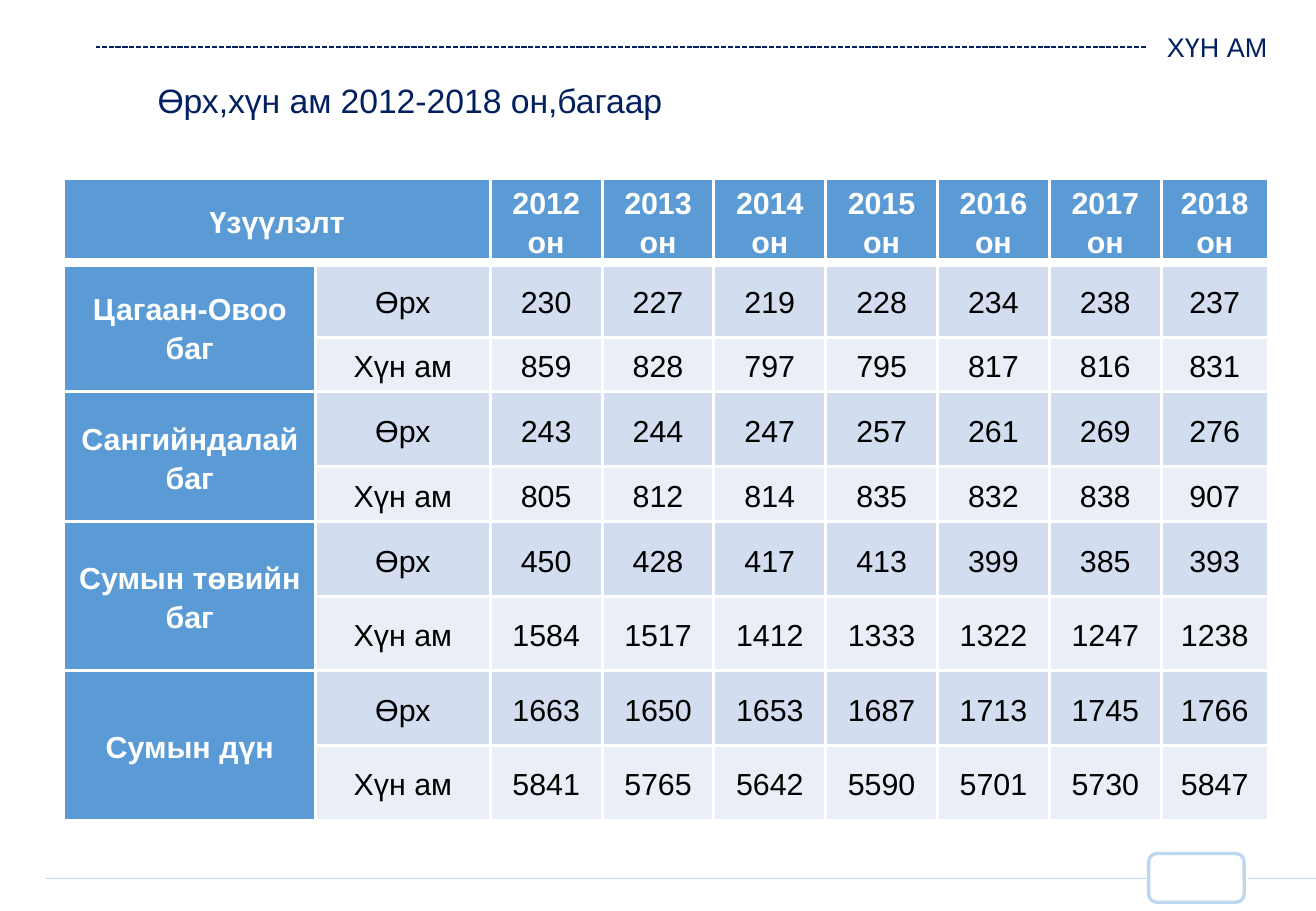
from lxml.etree import SubElement as Sub
from pptx import Presentation
from pptx.dml.color import RGBColor as RGB
from pptx.enum.dml import MSO_LINE as Dash
from pptx.enum.shapes import MSO_CONNECTOR as Conn, MSO_SHAPE as Form
from pptx.enum.text import MSO_ANCHOR as Anchor, PP_ALIGN as Align
from pptx.oxml.ns import qn
from pptx.util import Cm, Pt

# Content
YEARS = range(2012, 2019)
HEAD = "Үзүүлэлт"
KINDS = ("Өрх", "Хүн ам")
BAGS = [
    ("Цагаан-Овоо баг",
     (230, 227, 219, 228, 234, 238, 237),
     (859, 828, 797, 795, 817, 816, 831)),
    ("Сангийндалай баг",
     (243, 244, 247, 257, 261, 269, 276),
     (805, 812, 814, 835, 832, 838, 907)),
    ("Сумын төвийн баг",
     (450, 428, 417, 413, 399, 385, 393),
     (1584, 1517, 1412, 1333, 1322, 1247, 1238)),
    ("Сумын дүн",
     (1663, 1650, 1653, 1687, 1713, 1745, 1766),
     (5841, 5765, 5642, 5590, 5701, 5730, 5847)),
]
# Text, size, left, top, width, height
TEXTS = [
    ("ХҮН АМ", 8, 11.96, 0.2, 1.58, 0.61),
    ("Өрх,хүн ам 2012-2018 он,багаар", 10, 1.4, 0.71, 8.46, 0.69),
]
# Start x, end x, y, colour, dash
LINES = [
    (11.99, 1, 0.49, "navy", Dash.SQUARE_DOT),
    (0.48, 11.99, 9.19, "pale", None),
    (13.06, 13.77, 9.19, "pale", None),
]

# Look
INK = {"navy": "002060", "pale": "BDD7EE", "blue": "5B9BD5",
       "odd": "D2DEEF", "even": "EAEFF7", "white": "FFFFFF", "black": "000000"}
COLS = [2.63, 1.83] + [1.17] * 6 + [1.12]
ROWS = [0.78, 0.78, 0.57, 0.78, 0.58] + [0.78] * 4
CELL = {"margin_left": Cm(0.13), "margin_right": Cm(0.13), "margin_top": 0,
        "margin_bottom": 0, "vertical_anchor": Anchor.MIDDLE}


def color(name):
    return RGB.from_string(INK[name])


def assign(obj, form):
    for key, val in form.items():
        setattr(obj, key, val)


def write(frame, text, size, ink, bold=False):
    para = frame.paragraphs[0]
    run = para.add_run()
    run.text = text
    assign(run.font, {"name": "Arial", "size": Pt(size), "bold": bold})
    run.font.color.rgb = color(ink)
    return para


def border(cell, row):
    thick = {"L": 1, "R": 1, "T": 3 if row == 1 else 1, "B": 1 if row else 3}
    props = cell._tc.get_or_add_tcPr()
    for side, width in thick.items():
        edge = Sub(props, qn(f"a:ln{side}"), w=str(Pt(width)))
        Sub(Sub(edge, qn("a:solidFill")), qn("a:srgbClr"), val=INK["white"])


deck = Presentation()
assign(deck, {"slide_width": Cm(13.77), "slide_height": Cm(9.53)})
shapes = deck.slides.add_slide(deck.slide_layouts[6]).shapes

# Rules at the top and bottom
for start, end, y, ink, dash in LINES:
    rule = shapes.add_connector(Conn.STRAIGHT, Cm(start), Cm(y), Cm(end), Cm(y))
    rule.line.color.rgb = color(ink)
    assign(rule.line, {"width": Pt(0.5), "dash_style": dash})
    Sub(rule._element.spPr, qn("a:effectLst"))

# Page box
box = shapes.add_shape(Form.ROUNDED_RECTANGLE, Cm(12.02), Cm(8.93), Cm(1), Cm(0.51))
box.shadow.inherit = False
box.fill.background()
box.line.color.rgb = color("pale")
box.line.width = Pt(1)

# Section name and title
for text, size, *area in TEXTS:
    frame = shapes.add_textbox(*map(Cm, area)).text_frame
    frame.word_wrap = True
    write(frame, text, size, "navy")

# Table
grid = [[HEAD, ""] + [f"{year} он" for year in YEARS]]
for bag, *sets in BAGS:
    for kind, vals in zip(KINDS, sets):
        grid.append([bag if kind == KINDS[0] else "", kind, *map(str, vals)])

table = shapes.add_table(len(ROWS), len(COLS), Cm(0.67), Cm(1.87),
                         Cm(sum(COLS)), Cm(sum(ROWS))).table
for col, width in zip(table.columns, COLS):
    col.width = Cm(width)
for row, height in zip(table.rows, ROWS):
    row.height = Cm(height)

for r, line in enumerate(grid):
    for c, text in enumerate(line):
        cell = table.cell(r, c)
        label = r == 0 or c == 0
        assign(cell, CELL)
        border(cell, r)
        cell.fill.solid()
        cell.fill.fore_color.rgb = color("blue" if label else "odd" if r % 2 else "even")
        if text:
            para = write(cell.text_frame, text, 9, "white" if label else "black", label)
            assign(para, {"alignment": Align.CENTER, "line_spacing": 1.15})

table.cell(0, 0).merge(table.cell(0, 1))
for r in range(1, len(ROWS), len(KINDS)):
    table.cell(r, 0).merge(table.cell(r + 1, 0))

deck.save("out.pptx")
